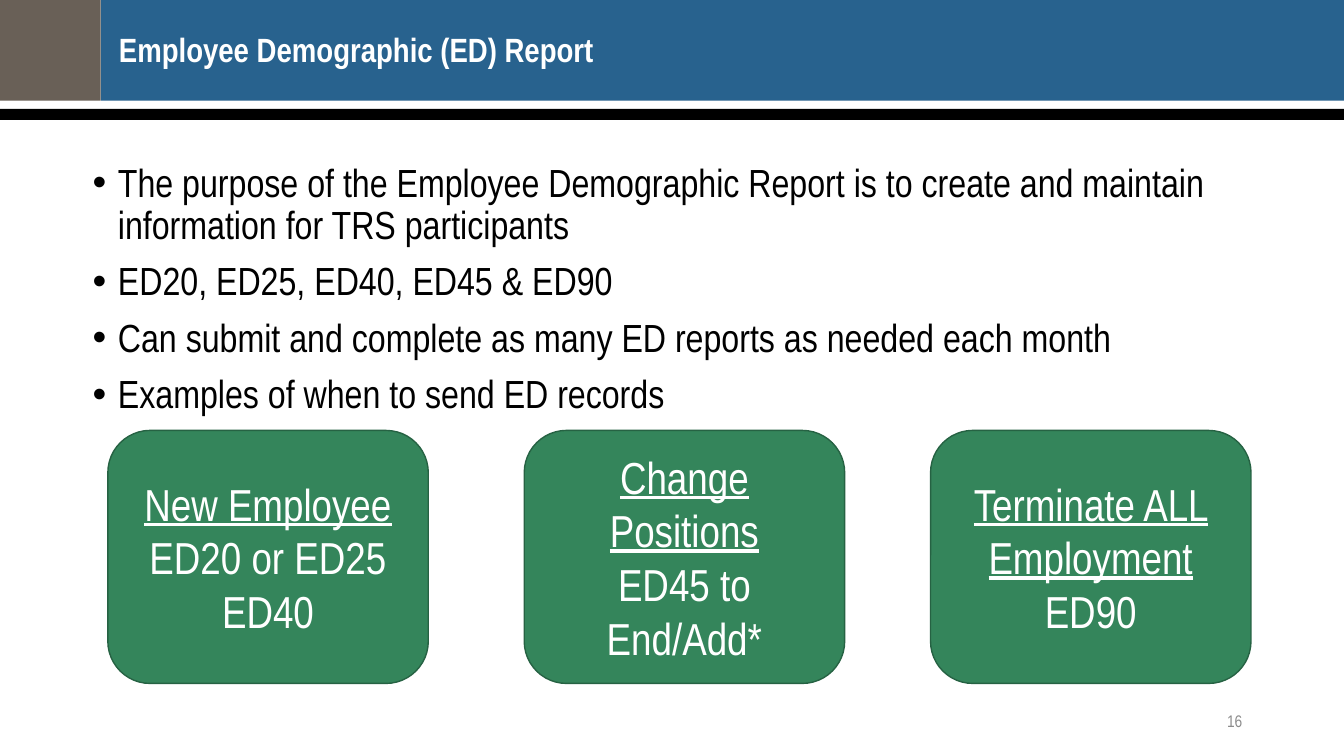
import pptx
import pptx.util
import pptx.dml.color
import pptx.enum.shapes
import pptx.enum.text
import pptx.oxml.ns
import lxml.etree

Inches, Pt = pptx.util.Inches, pptx.util.Pt
RGBColor = pptx.dml.color.RGBColor
MSO_SHAPE = pptx.enum.shapes.MSO_SHAPE
PP_ALIGN = pptx.enum.text.PP_ALIGN
MSO_ANCHOR = pptx.enum.text.MSO_ANCHOR

WIDTH, HEIGHT = 13.33, 7.5
FONT = "Arial Narrow"
BLUE = RGBColor(0x28, 0x62, 0x8E)
TAUPE = RGBColor(0x69, 0x60, 0x57)
GREEN = RGBColor(0x34, 0x85, 0x5B)
DARK_GREEN = RGBColor(0x26, 0x62, 0x43)
GRAY = RGBColor(0x8C, 0x8C, 0x8C)
BLACK = RGBColor(0, 0, 0)
WHITE = RGBColor(255, 255, 255)

BULLETS = [
    "The purpose of the Employee Demographic Report is to create and maintain information for TRS participants",
    "ED20, ED25, ED40, ED45 & ED90",
    "Can submit and complete as many ED reports as needed each month",
    "Examples of when to send ED records",
]
EXAMPLES = [
    (0, ["New Employee", "ED20 or ED25", "ED40"]),
    (4.13, ["Change Positions", "ED45 to End/Add*"]),
    (8.16, ["Terminate ALL Employment", "ED90"]),
]


def add_block(slide, kind, box, fill, line=None):
    """Add a filled preset shape, outlined only if a line colour is given."""
    sp = slide.shapes.add_shape(kind, *map(Inches, box))
    sp.shadow.inherit = False
    sp.fill.solid()
    sp.fill.fore_color.rgb = fill
    if line is None:
        sp.line.fill.background()
    else:
        sp.line.color.rgb = line
        sp.line.width = Pt(1)
    return sp


def add_text(slide, box, margin=0):
    """Add a wrapping text box with equal margins and return its text frame."""
    tf = slide.shapes.add_textbox(*map(Inches, box)).text_frame
    tf.word_wrap = True
    tf.margin_left = tf.margin_right = Inches(margin)
    tf.margin_top = tf.margin_bottom = Inches(margin / 2)
    return tf


def write_lines(tf, lines, size, color, align=PP_ALIGN.LEFT, spacing=None):
    """Write one paragraph per line in a shared style."""
    tf.text = "\n".join(lines)
    for p in tf.paragraphs:
        p.alignment = align
        p.line_spacing = spacing
        for r in p.runs:
            r.font.name = FONT
            r.font.size = Pt(size)
            r.font.color.rgb = color


def add_header(slide, box):
    """Draw the banner, its corner block, the rule and the title."""
    left, top, width, height = box
    banner = height * 0.84
    for part, fill in [
        ((left + 1, top, width - 1, banner), BLUE),
        ((left, top, 1, banner), TAUPE),
        ((left, top + height - 0.11, width, 0.11), BLACK),
    ]:
        add_block(slide, MSO_SHAPE.RECTANGLE, part, fill)
    tf = add_text(slide, (left + 1.18, top + 0.33, 11.23, 0.56))
    write_lines(tf, ["Employee Demographic (ED) Report"], 24, WHITE, spacing=0.9)
    tf.paragraphs[0].runs[0].font.bold = True


def add_bullets(slide, box):
    """Write the bulleted list with hanging indents."""
    tf = add_text(slide, box)
    write_lines(tf, BULLETS, 28, BLACK, spacing=0.9)
    for i, p in enumerate(tf.paragraphs):
        if i:
            p.space_before = Pt(10)
        pPr = p._p.get_or_add_pPr()
        pPr.set("marL", str(Inches(0.25)))
        pPr.set("indent", str(-Inches(0.25)))
        font = lxml.etree.SubElement(pPr, pptx.oxml.ns.qn("a:buFont"))
        font.set("typeface", "Arial")
        bullet = lxml.etree.SubElement(pPr, pptx.oxml.ns.qn("a:buChar"))
        bullet.set("char", "•")


def add_examples(slide, box):
    """Draw the example cards with underlined headings."""
    left, top, width, height = box
    for offset, lines in EXAMPLES:
        card = (left + offset, top, width * 0.28, height)
        sp = add_block(slide, MSO_SHAPE.ROUNDED_RECTANGLE, card, GREEN, DARK_GREEN)
        tf = sp.text_frame
        tf.word_wrap = True
        tf.vertical_anchor = MSO_ANCHOR.MIDDLE
        write_lines(tf, lines, 32, WHITE, PP_ALIGN.CENTER)
        tf.paragraphs[0].runs[0].font.underline = True


def add_page_number(slide, box):
    """Write the slide number at the right of its box."""
    tf = add_text(slide, box, 0.1)
    tf.vertical_anchor = MSO_ANCHOR.MIDDLE
    write_lines(tf, ["16"], 12, GRAY, PP_ALIGN.RIGHT)


def main():
    """Build and save the slide."""
    prs = pptx.Presentation()
    prs.slide_width, prs.slide_height = Inches(WIDTH), Inches(HEIGHT)
    slide = prs.slides.add_slide(prs.slide_layouts[6])
    add_header(slide, (0, 0, WIDTH, 1.19))
    add_bullets(slide, (0.92, 1.62, 11.5, 2.58))
    add_page_number(slide, (9.42, 6.95, 3, 0.4))
    add_examples(slide, (1.07, 4.27, 11.35, 2.51))
    prs.save("out.pptx")


if __name__ == "__main__":
    main()
